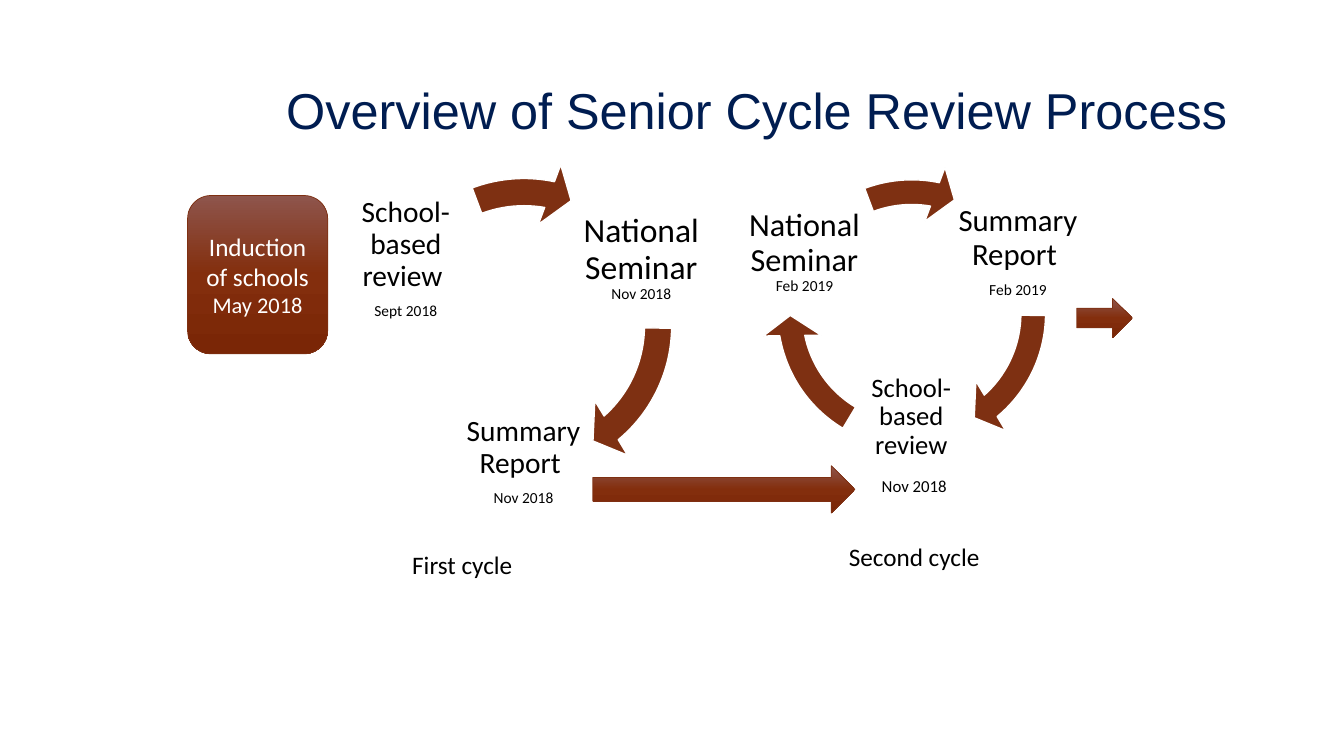
import pptx
import pptx.dml.color
import pptx.enum.shapes
import pptx.enum.text
import pptx.oxml.ns
import pptx.util
import copy
from dataclasses import dataclass
from lxml import etree

Inches = pptx.util.Inches
Pt = pptx.util.Pt
RGB = pptx.dml.color.RGBColor.from_string
Kind = pptx.enum.shapes.MSO_SHAPE
Align = pptx.enum.text.PP_ALIGN
Anchor = pptx.enum.text.MSO_ANCHOR
qn = pptx.oxml.ns.qn


@dataclass(frozen=True)
class Theme:
    navy: str = "001D51"
    black: str = "000000"
    white: str = "FFFFFF"
    rust: str = "7E3012"
    grad: tuple = ((0, "8E554C"), (0.5, "832E0D"), (1, "7A2606"))
    head: str = "Arial"
    body: str = "Calibri"
    title: int = 36
    label: int = 18
    month: int = 16
    date: int = 11


theme = Theme()

# Start and end angles of the ring arrows, as adjustment values
RIGHT = (0.5, 29.66)
LEFT = (72.59, 101.74)
TOP = (149.66, 168.59)


def write(shape, paras, font=theme.body, color=theme.black, align=Align.LEFT,
          anchor=Anchor.TOP, inset=None, lead=None, after=None):
    """Fill a shape with paragraphs, each a list of (text, size) runs."""
    frame = shape.text_frame
    frame.word_wrap = True
    frame.vertical_anchor = anchor
    if inset is not None:
        for side in ("left", "top", "right", "bottom"):
            setattr(frame, "margin_" + side, Inches(inset))
    for i, runs in enumerate(paras):
        para = frame.add_paragraph() if i else frame.paragraphs[0]
        para.alignment = align
        if lead:
            para.line_spacing = lead
        if after:
            gap = etree.SubElement(para._p.get_or_add_pPr(), qn("a:spcAft"))
            etree.SubElement(gap, qn("a:spcPct")).set("val", str(after * 1000))
        for text, size in runs:
            run = para.add_run()
            run.text = text
            run.font.name = font
            run.font.size = Pt(size)
            run.font.color.rgb = RGB(color)


def add_text(slide, box, paras, **form):
    write(slide.shapes.add_textbox(*map(Inches, box)), paras, **form)


def add_form(slide, kind, box, line, width):
    shape = slide.shapes.add_shape(kind, *map(Inches, box))
    shape.shadow.inherit = False
    shape.line.color.rgb = RGB(line)
    shape.line.width = Pt(width)
    return shape


def add_block(slide, kind, box):
    """Shape with the three-stop vertical gradient."""
    shape = add_form(slide, kind, box, theme.rust, 0.5)
    shape.fill.gradient()
    shape.fill.gradient_angle = 270
    stops = shape._element.spPr.find(qn("a:gradFill")).find(qn("a:gsLst"))
    stops.append(copy.deepcopy(stops[0]))
    for stop, (place, color) in zip(shape.fill.gradient_stops, theme.grad):
        stop.color.rgb = RGB(color)
        stop.position = place
    return shape


def add_cycle(slide, left, top, node, steps, sweeps):
    """Three labels (left, right, bottom) around a ring; all scales with node."""
    ring = (left + 0.16 * node, top, 2.367 * node, 2.367 * node)
    for start, end in sweeps:
        arrow = add_form(slide, Kind.CIRCULAR_ARROW, ring, theme.white, 1)
        arrow.fill.solid()
        arrow.fill.fore_color.rgb = RGB(theme.rust)
        for i, value in enumerate((0.082, 5.76, end, start, 0.096)):
            arrow.adjustments[i] = value
    spots = ((0, 0.2), (1.68, 0.2), (0.84, 1.65))
    for (x, y), paras in zip(spots, steps):
        add_text(slide, (left + x * node, top + y * node, node, node), paras,
                 align=Align.CENTER, anchor=Anchor.MIDDLE, inset=0.03,
                 lead=0.9, after=35)


def add_start(slide, box):
    block = add_block(slide, Kind.FLOWCHART_ALTERNATE_PROCESS, box)
    write(block, [[("Induction of schools", theme.label)],
                  [("May 2018", theme.month)]],
          color=theme.white, align=Align.CENTER, anchor=Anchor.MIDDLE)


def main():
    deck = pptx.Presentation()
    deck.slide_width, deck.slide_height = Inches(13.33), Inches(7.5)
    slide = deck.slides.add_slide(deck.slide_layouts[6])

    # Title
    add_text(slide, (2.74, 0.4, 9.67, 1.45),
             [[("Overview of Senior Cycle Review Process", theme.title)]],
             font=theme.head, color=theme.navy, anchor=Anchor.MIDDLE, lead=0.9)

    # Second cycle
    add_cycle(slide, 7.35, 1.62, 1.26, [
        [[("National Seminar ", 23), ("Feb 2019", theme.date)]],
        [[("Summary Report ", 22)], [("Feb 2019", theme.date)]],
        [[("School-based review", 19)], [(" ", 19), ("Nov 2018", 12)]],
    ], (RIGHT, LEFT, TOP))

    # First cycle
    add_cycle(slide, 3.33, 1.59, 1.39, [
        [[("School-based review ", 21)], [("Sept 2018", theme.date)]],
        [[("National Seminar ", 24), ("Nov 2018", theme.date)]],
        [[("Summary Report ", 21)], [("Nov 2018", theme.date)]],
    ], (RIGHT, TOP))

    # Induction and the arrows onward
    add_start(slide, (1.86, 1.94, 1.39, 1.57))
    for box in ((5.88, 4.62, 2.6, 0.47), (10.68, 2.96, 0.55, 0.39)):
        add_block(slide, Kind.RIGHT_ARROW, box)

    # Cycle names
    for name, box in (("First cycle", (3.99, 5.4, 2.6, 0.4)),
                      ("Second cycle", (8.32, 5.32, 2.13, 0.4))):
        add_text(slide, box, [[(name, theme.label)]])

    deck.save("out.pptx")


if __name__ == "__main__":
    main()
